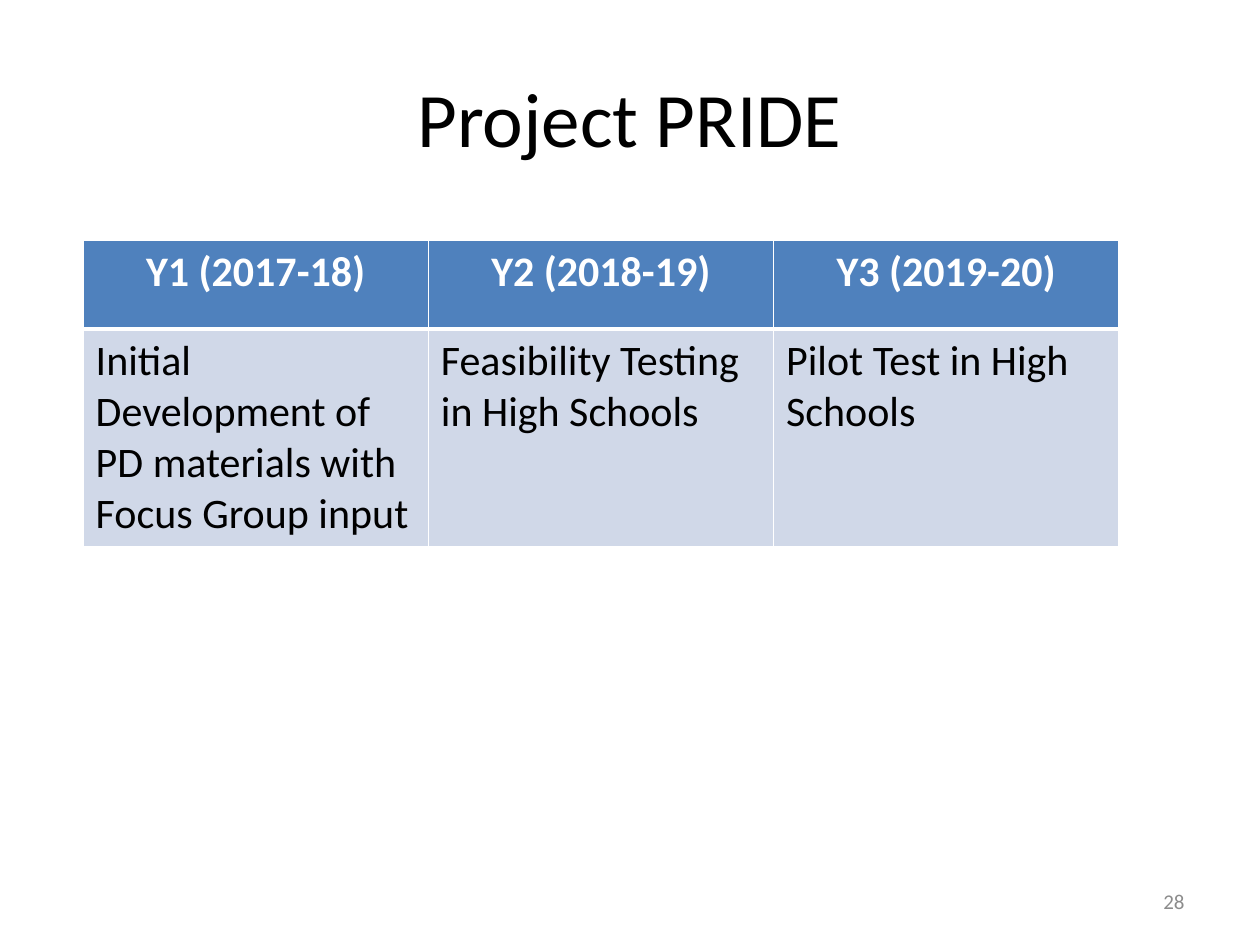
from lxml.etree import SubElement
from pptx import Presentation
from pptx.dml.color import RGBColor
from pptx.enum.text import MSO_ANCHOR, PP_ALIGN
from pptx.oxml.ns import qn
from pptx.util import Inches, Pt

HEADINGS = ["Y1 (2017-18)", "Y2 (2018-19)", "Y3 (2019-20)"]
ACTIVITIES = [
    "Initial Development of PD materials with Focus Group input",
    "Feasibility Testing in High Schools",
    "Pilot Test in High Schools",
]


def color(value):
    return RGBColor.from_string(value)


def write(frame, text, size, text_color, align, bold=False):
    frame.text = text
    para = frame.paragraphs[0]
    para.alignment = align
    font = para.runs[0].font
    font.name = "Calibri"
    font.size = Pt(size)
    font.bold = bold
    font.color.rgb = color(text_color)


def place(shape, box):
    shape.left, shape.top, shape.width, shape.height = [Inches(n) for n in box]


def add_title(page, box, text):
    title = page.shapes.title
    place(title, box)
    title.text_frame.vertical_anchor = MSO_ANCHOR.MIDDLE
    write(title.text_frame, text, 44, "000000", PP_ALIGN.CENTER)


def add_page_number(page, box, number):
    frame = page.shapes.add_textbox(*[Inches(n) for n in box]).text_frame
    frame.word_wrap = True
    frame.vertical_anchor = MSO_ANCHOR.MIDDLE
    write(frame, number, 12, "8C8C8C", PP_ALIGN.RIGHT)


def set_borders(cell, widths):
    properties = cell._tc.get_or_add_tcPr()
    for side, width in zip("LRTB", widths):
        line = SubElement(properties, qn(f"a:ln{side}"), w=str(Pt(width)))
        fill = SubElement(line, qn("a:solidFill"))
        SubElement(fill, qn("a:srgbClr"), val="FFFFFF")


def style_cell(cell, text, heading):
    set_borders(cell, (1, 1, 1, 3) if heading else (1, 1, 3, 1))
    cell.fill.solid()
    cell.fill.fore_color.rgb = color("4F81BD" if heading else "D0D8E8")
    text_color = "FFFFFF" if heading else "000000"
    align = PP_ALIGN.CENTER if heading else PP_ALIGN.LEFT
    write(cell.text_frame, text, 24, text_color, align, heading)


def add_timeline(page, box, heading_height):
    rows = [HEADINGS, ACTIVITIES]
    frame = page.shapes.add_table(len(rows), len(HEADINGS), *[Inches(n) for n in box])
    table = frame.table
    table.rows[0].height = Inches(heading_height)
    table.rows[1].height = Inches(box[3] - heading_height)
    for row, texts in enumerate(rows):
        for column, text in enumerate(texts):
            style_cell(table.cell(row, column), text, row == 0)


def main():
    deck = Presentation()
    deck.slide_width, deck.slide_height = Inches(10), Inches(7.5)
    page = deck.slides.add_slide(deck.slide_layouts[5])
    add_title(page, (0.5, 0.3, 9, 1.25), "Project PRIDE")
    add_page_number(page, (7.17, 6.95, 2.33, 0.4), "28")
    add_timeline(page, (0.66, 1.91, 8.22, 2.43), 0.7)
    deck.save("out.pptx")


if __name__ == "__main__":
    main()
